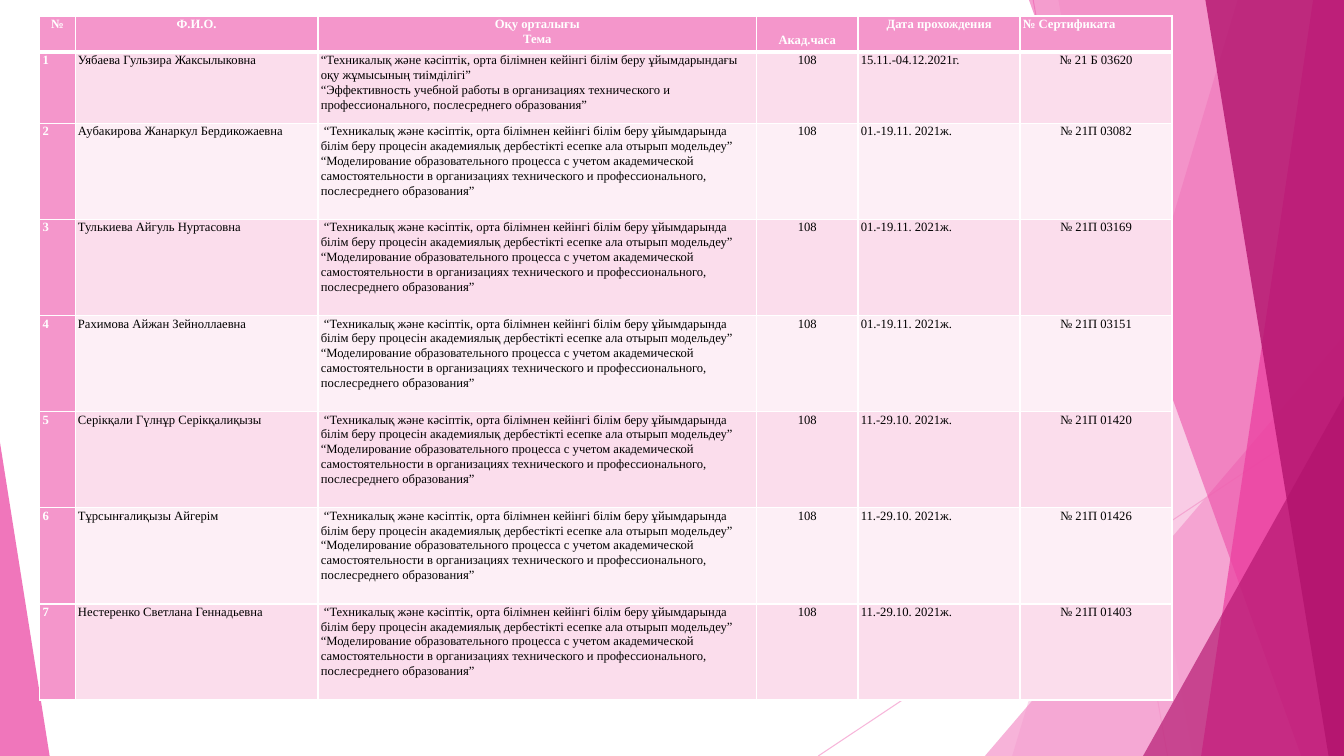
from pptx import Presentation
from pptx.dml.color import RGBColor as Rgb
from pptx.enum.shapes import MSO_CONNECTOR as Conn, MSO_SHAPE as Shp
from pptx.enum.text import MSO_ANCHOR as Anch, PP_ALIGN as Al
from pptx.oxml.ns import qn
from pptx.util import Pt
from lxml.etree import SubElement as Sub

WHITE, BLACK = "FFFFFF", "000000"
ROSE, PINK, WINE = "F496CB", "EB3D9F", "B2136D"
BANDS = ("FBDDEC", "FDEFF6")

# Backdrop: line ends; slanted bands by top x, foot x; triangles by box, tip
RAYS = [(738, 0, 834, 540), (960, 290, 584.5, 540)]
SLANTS = [(884, 723, ROSE, 36), (756, 852, ROSE, 20)]
FRONT = [(735, 929.5, PINK, 50), (938, 858, PINK, 70), (861, 949, WINE, 80)]
PEAK = (703.5, 240, 256.5, 300, 1, ROSE, 72)
ENDS = [(816.5, 283, 143.5, 257, 1, WINE, 66),
        (0, 316, 35.5, 224, 0, PINK, 70)]

# Table
WIDTHS = (25.3, 173.5, 313.2, 72.5, 115.8, 108.5)
HEIGHTS = [26, 51] + [68.6] * 6
HEADS = ["№", "Ф.И.О.", "Оқу орталығы\nТема", "Акад.часа",
         "Дата прохождения", "№ Сертификата"]
HEAD_AL = [Al.CENTER] * 5 + [Al.LEFT]
BODY_AL = [Al.LEFT] * 3 + [Al.CENTER, Al.LEFT, Al.CENTER]
WORK = (
    "“Техникалық және кәсіптік, орта білімнен кейінгі білім беру "
    "ұйымдарындағы оқу жұмысының тиімділігі”\n"
    "“Эффективность учебной работы в организациях технического и "
    "профессионального, послесреднего образования”")
MODEL = (
    "“Техникалық және кәсіптік, орта білімнен кейінгі білім беру "
    "ұйымдарында білім беру процесін академиялық дербестікті есепке ала "
    "отырып модельдеу”\n"
    "“Моделирование образовательного процесса с учетом академической "
    "самостоятельности в организациях технического и профессионального, "
    "послесреднего образования”")
NOV, OCT = "01.-19.11. 2021ж.", "11.-29.10. 2021ж."
STAFF = [
    ("Уябаева Гульзира Жаксылыковна", WORK, "15.11.-04.12.2021г.", "№ 21 Б 03620"),
    ("Аубакирова Жанаркул Бердикожаевна", MODEL, NOV, "№ 21П 03082"),
    ("Тулькиева Айгуль Нуртасовна", MODEL, NOV, "№ 21П 03169"),
    ("Рахимова Айжан Зейноллаевна", MODEL, NOV, "№ 21П 03151"),
    ("Серікқали Гүлнұр Серікқалиқызы", MODEL, OCT, "№ 21П 01420"),
    ("Тұрсынғалиқызы Айгерім", MODEL, OCT, "№ 21П 01426"),
    ("Нестеренко Светлана Геннадьевна", MODEL, OCT, "№ 21П 01403"),
]


def tint(fmt, hue):
    fmt.rgb = Rgb.from_string(hue)


def put(obj, vals):
    for key, val in vals.items():
        setattr(obj, key, val)


def fade(fill, alpha):
    node = fill.find(".//" + qn("a:srgbClr"))
    Sub(node, qn("a:alpha")).set("val", str(alpha * 1000))


def paint(shape, hue, alpha):
    shape.shadow.inherit = False
    shape.fill.solid()
    tint(shape.fill.fore_color, hue)
    fade(shape.element.spPr.find(qn("a:solidFill")), alpha)
    shape.line.fill.background()


def ray(slide, *ends):
    line = slide.shapes.add_connector(Conn.STRAIGHT, *map(Pt, ends))
    line.line.width = Pt(0.75)
    tint(line.line.color, ROSE)
    fade(line.line._get_or_add_ln(), 70)
    Sub(line._element.spPr, qn("a:effectLst"))


def slant(slide, top, foot, hue, alpha):
    pen = slide.shapes.build_freeform(Pt(top), 0)
    rest = [(960, 0), (960, 540), (foot, 540)]
    pen.add_line_segments([(Pt(x), Pt(y)) for x, y in rest], close=True)
    paint(pen.convert_to_shape(), hue, alpha)


def wedge(slide, x, y, wide, high, tip, hue, alpha):
    box = map(Pt, (x, y, wide, high))
    shape = slide.shapes.add_shape(Shp.ISOSCELES_TRIANGLE, *box)
    shape.adjustments[0] = tip
    paint(shape, hue, alpha)


def edge(cell, side, width):
    line = Sub(cell._tc.get_or_add_tcPr(), qn("a:ln" + side))
    line.set("w", str(Pt(width)))
    Sub(Sub(line, qn("a:solidFill")), qn("a:srgbClr")).set("val", WHITE)


def write(cell, text, align, hue, bold):
    cell.text = text
    for para in cell.text_frame.paragraphs:
        put(para, {"alignment": align, "line_spacing": 1.07})
        for run in para.runs:
            put(run.font, {"name": "Times New Roman", "size": Pt(9), "bold": bold})
            tint(run.font.color, hue)


def dress(cell, row, fill):
    put(cell, {"margin_left": Pt(2), "margin_right": Pt(2),
               "margin_top": 0, "margin_bottom": 0})
    thick = {(0, "B"), (1, "T")}
    for side in "LRTB":
        edge(cell, side, 3 if (row, side) in thick else 1)
    cell.fill.solid()
    tint(cell.fill.fore_color, fill)


def roster(slide):
    rows = [HEADS] + [(str(n), name, theme, "108", date, code)
                      for n, (name, theme, date, code) in enumerate(STAFF, 1)]
    box = map(Pt, (28.4, 11.4, sum(WIDTHS), sum(HEIGHTS)))
    grid = slide.shapes.add_table(len(rows), len(HEADS), *box).table
    grid.horz_banding = False
    for col, wide in zip(grid.columns, WIDTHS):
        col.width = Pt(wide)
    for r, (row, high) in enumerate(zip(rows, HEIGHTS)):
        grid.rows[r].height = Pt(high)
        for c, text in enumerate(row):
            cell = grid.cell(r, c)
            main = r == 0 or c == 0
            align = BODY_AL[c] if r else HEAD_AL[c]
            write(cell, text, align, WHITE if main else BLACK, main)
            dress(cell, r, ROSE if main else BANDS[(r - 1) % 2])
            if text == MODEL:
                first = cell.text_frame.paragraphs[0]
                first._p.get_or_add_pPr().set("indent", str(Pt(2.25)))
    # The hours heading sits on the second line
    put(grid.cell(0, 3), {"vertical_anchor": Anch.BOTTOM, "margin_bottom": Pt(3.5)})


def main():
    deck = Presentation()
    put(deck, {"slide_width": Pt(960), "slide_height": Pt(540)})
    slide = deck.slides.add_slide(deck.slide_layouts[6])
    # Backdrop, back to front
    for ends in RAYS:
        ray(slide, *ends)
    for band in SLANTS:
        slant(slide, *band)
    wedge(slide, *PEAK)
    for band in FRONT:
        slant(slide, *band)
    for tri in ENDS:
        wedge(slide, *tri)
    # Certificates
    roster(slide)
    deck.save("out.pptx")


if __name__ == "__main__":
    main()
